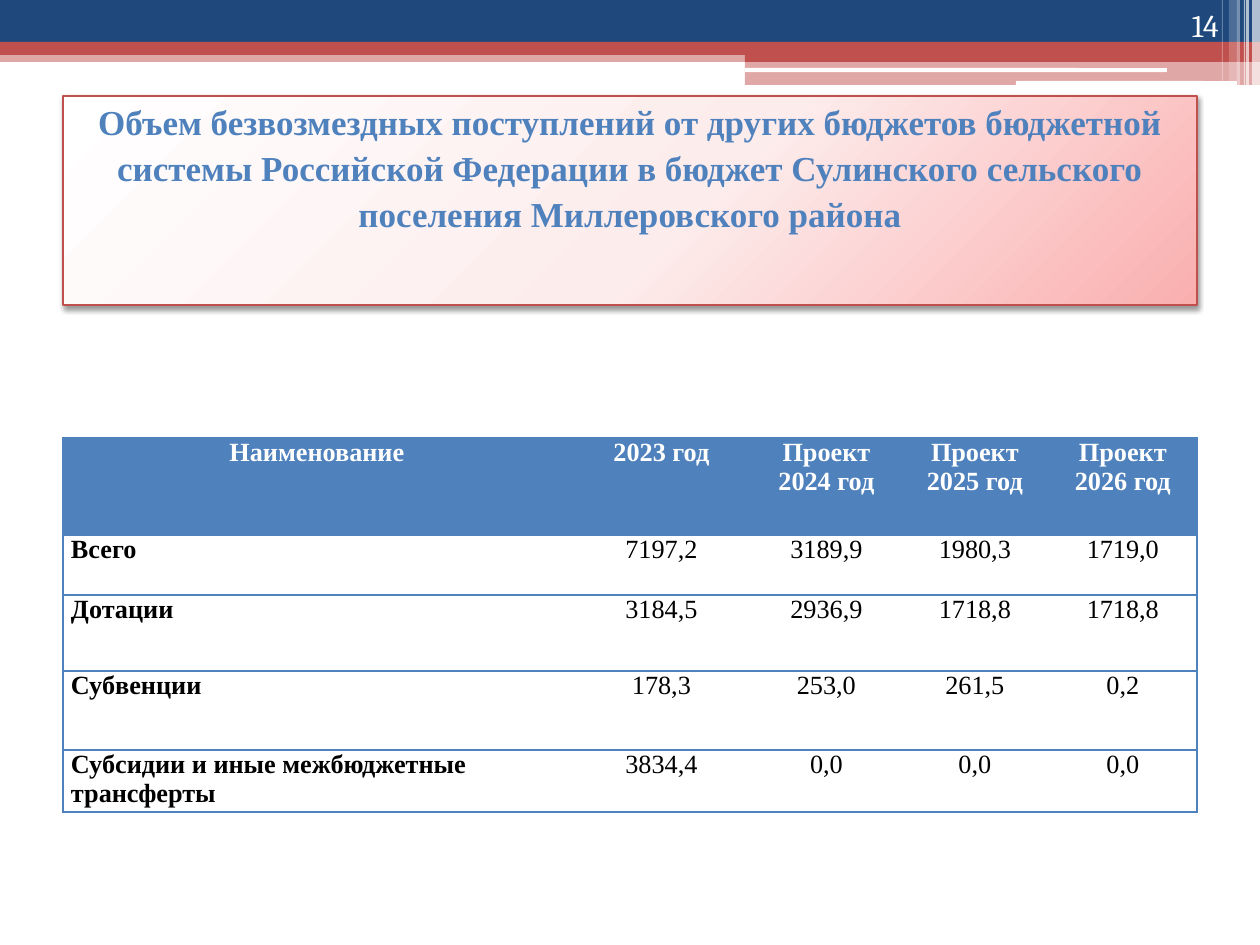
from lxml import etree
from pptx import Presentation
from pptx.dml.color import RGBColor
from pptx.enum.shapes import MSO_SHAPE as Shape
from pptx.enum.text import MSO_ANCHOR as Anchor, PP_ALIGN as Align
from pptx.oxml import parse_xml
from pptx.oxml.ns import nsdecls, qn
from pptx.util import Pt

PX = 914400 / 126
NAVY = RGBColor(0x1F, 0x49, 0x7D)
RED = RGBColor(0xC0, 0x50, 0x4D)
BLUE = RGBColor(0x4F, 0x81, 0xBD)
WHITE = RGBColor(0xFF, 0xFF, 0xFF)
BLACK = RGBColor(0, 0, 0)
BLUSH = RGBColor(0xFD, 0xEC, 0xEC)
PINK = RGBColor(0xFA, 0xAF, 0xAF)
SERIF = "Times New Roman"
NO_GRID_STYLE = "{2D5ABB26-0587-4C30-8999-92F81FD0307C}"

TITLE = ("Объем безвозмездных поступлений от других бюджетов бюджетной системы "
         "Российской Федерации в бюджет Сулинского сельского поселения "
         "Миллеровского района")
ROWS = [
    ["Наименование", "2023 год", "Проект 2024 год", "Проект 2025 год", "Проект 2026 год"],
    ["Всего", "7197,2", "3189,9", "1980,3", "1719,0"],
    ["Дотации", "3184,5", "2936,9", "1718,8", "1718,8"],
    ["Субвенции", "178,3", "253,0", "261,5", "0,2"],
    ["Субсидии и иные межбюджетные трансферты", "3834,4", "0,0", "0,0", "0,0"],
]
COLUMN_WIDTHS = [508, 181, 149, 148, 148]
ROW_HEIGHTS = [97, 60, 76, 79, 62]


def px(*lengths):
    return [round(length * PX) for length in lengths]


def assign(target, values):
    for name, value in values.items():
        setattr(target, name, value)


def write(frame, text, align, font, **para_values):
    para = frame.paragraphs[0]
    assign(para, {"alignment": align, **para_values})
    span = para.add_run()
    span.text = text
    color = font["color"]
    assign(span.font, {name: value for name, value in font.items() if name != "color"})
    span.font.color.rgb = color


def add_block(page, box, color, opacity=100, kind=Shape.RECTANGLE):
    """Add a plain filled shape; opacity is in percent."""
    block = page.shapes.add_shape(kind, *px(*box))
    block.shadow.inherit = False
    block.line.fill.background()
    block.fill.solid()
    block.fill.fore_color.rgb = color
    if opacity < 100:
        tint = block.fill._xPr.find(qn("a:solidFill"))[0]
        etree.SubElement(tint, qn("a:alpha"), val=str(opacity * 1000))


def add_banner(page, left, top, width):
    def band(x, y, w, h, *style):
        add_block(page, (left + x, top + y, w, h), *style)

    step = 745
    band(0, 50, width, 12, RED, 50)
    band(0, 0, width, 42, NAVY)
    band(0, 42, width, 13, RED)
    band(step, 49, width - step, 13, RED)
    band(step, 62, width - step, 23, RED, 50)
    band(step, 68, 422, 4, WHITE, 100, Shape.ROUNDED_RECTANGLE)
    band(1016, 81, 221, 5, WHITE, 100, Shape.ROUNDED_RECTANGLE)
    stripes = [(8, 8, 85, 65), (14, 3, 85, 65), (16, 1, 85, 60),
               (23, 3, 85, 40), (31, 8, 81, 20), (38, 1, 81, 30)]
    for from_right, stripe_width, height, opacity in stripes:
        band(width - from_right, 0, stripe_width, height, WHITE, opacity)


def add_title(page, left, top, width, height):
    """Add the framed title with a diagonal gradient and a soft shadow."""
    panel = page.shapes.add_shape(Shape.RECTANGLE, *px(left, top, width, height))
    panel.line.color.rgb = RED
    panel.line.width = Pt(1)
    panel.fill.background()
    properties = panel.fill._xPr
    stops = "".join(f'<a:gs pos="{at * 1000}"><a:srgbClr val="{color}"/></a:gs>'
                    for at, color in [(0, WHITE), (55, BLUSH), (100, PINK)])
    gradient = parse_xml(f'<a:gradFill {nsdecls("a")}><a:gsLst>{stops}</a:gsLst>'
                         '<a:lin ang="2700000" scaled="0"/></a:gradFill>')
    properties.replace(properties.find(qn("a:noFill")), gradient)
    properties.append(parse_xml(
        f'<a:effectLst {nsdecls("a")}><a:outerShdw blurRad="40000" dist="23000" '
        f'dir="5400000" rotWithShape="0"><a:srgbClr val="{BLACK}">'
        '<a:alpha val="40000"/></a:srgbClr></a:outerShdw></a:effectLst>'))
    frame = panel.text_frame
    assign(frame, {"word_wrap": True, "vertical_anchor": Anchor.TOP, "margin_top": 0})
    font = {"name": SERIF, "size": Pt(20), "bold": True, "color": BLUE}
    write(frame, TITLE, Align.CENTER, font, line_spacing=1.1)


def add_borders(cell, sides):
    for side in sides:
        cell._tc.get_or_add_tcPr().append(parse_xml(
            f'<a:ln{side} {nsdecls("a")} w="12700"><a:solidFill>'
            f'<a:srgbClr val="{BLUE}"/></a:solidFill></a:ln{side}>'))


def add_budget_table(page, left, top):
    box = px(left, top, sum(COLUMN_WIDTHS), sum(ROW_HEIGHTS))
    table = page.shapes.add_table(len(ROWS), len(COLUMN_WIDTHS), *box).table
    table._tbl.tblPr.find(qn("a:tableStyleId")).text = NO_GRID_STYLE
    for column, width in zip(table.columns, px(*COLUMN_WIDTHS)):
        column.width = width
    for row, height in zip(table.rows, px(*ROW_HEIGHTS)):
        row.height = height

    last = len(COLUMN_WIDTHS) - 1
    side_margin, = px(8)
    for r, texts in enumerate(ROWS):
        for c, text in enumerate(texts):
            header, label = r == 0, c == 0
            cell = table.cell(r, c)
            assign(cell, {"margin_left": side_margin, "margin_right": side_margin,
                          "margin_top": 0, "margin_bottom": 0})
            add_borders(cell, ("L" if label else "") + ("R" if c == last else "") + "TB")
            if header:
                cell.fill.solid()
                cell.fill.fore_color.rgb = BLUE
            else:
                cell.fill.background()
            font = {"name": SERIF, "size": Pt(15), "bold": header or label,
                    "color": WHITE if header else BLACK}
            align = Align.LEFT if label and not header else Align.CENTER
            write(cell.text_frame, text, align, font)


def add_page_number(page, left, top, width, height):
    frame = page.shapes.add_textbox(*px(left, top, width, height)).text_frame
    assign(frame, {"word_wrap": True, "vertical_anchor": Anchor.BOTTOM})
    font = {"name": "Cambria", "size": Pt(18), "color": WHITE}
    write(frame, "14", Align.RIGHT, font)


def main():
    deck = Presentation()
    deck.slide_width, deck.slide_height = px(1260, 945)
    page = deck.slides.add_slide(deck.slide_layouts[6])
    add_banner(page, 0, 0, 1260)
    add_title(page, 63, 96, 1134, 209)
    add_budget_table(page, 63, 438)
    add_page_number(page, 1126, 0, 105, 50)
    deck.save("out.pptx")


if __name__ == "__main__":
    main()
